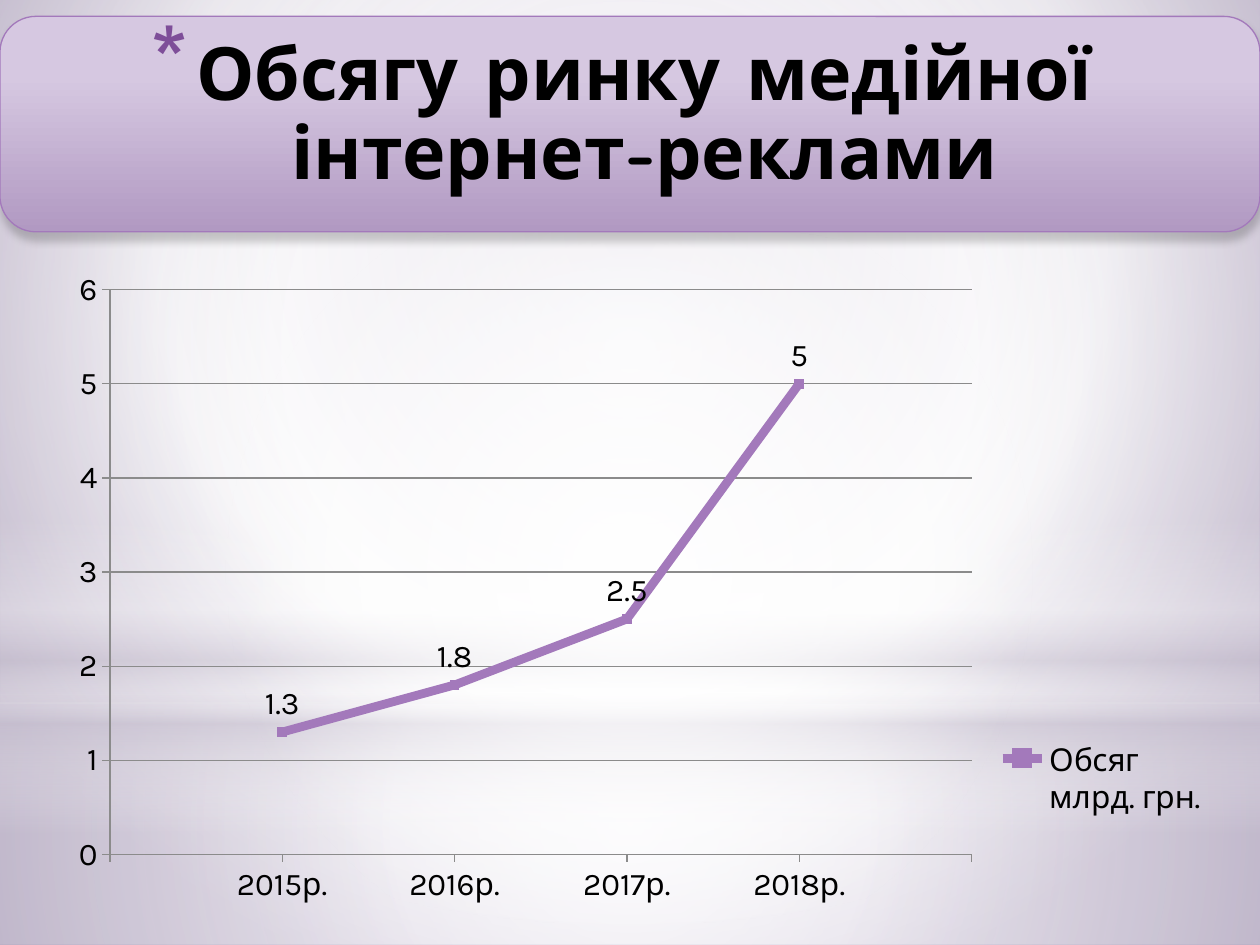
from lxml.etree import SubElement
from pptx import Presentation
from pptx.chart.data import CategoryChartData
from pptx.dml.color import RGBColor
from pptx.enum.chart import XL_CHART_TYPE as CT, XL_LABEL_POSITION as LabelPos
from pptx.enum.chart import XL_LEGEND_POSITION as LegendPos, XL_MARKER_STYLE as Marker
from pptx.enum.chart import XL_TICK_MARK as Tick
from pptx.enum.shapes import MSO_SHAPE as Shape
from pptx.enum.text import MSO_ANCHOR as Anchor, PP_ALIGN as Align
from pptx.oxml import parse_xml
from pptx.oxml.ns import nsdecls, qn
from pptx.util import Inches, Pt

PURPLE = "A379BB"
GRID = "8B8B8B"
CENTER = (50, 50, 50, 50)


def rgb(color):
    return RGBColor.from_string(color)


def set_gradient(fill, owner, stops, focus=None):
    """Stops are (percent, colour[, opacity]); focus makes it circular, else it runs down."""
    fill.solid()
    gs = ""
    for pos, color, *opacity in stops:
        alpha = f'<a:alpha val="{opacity[0] * 1000}"/>' if opacity else ""
        gs += (f'<a:gs pos="{pos * 1000}"><a:srgbClr val="{color}">{alpha}'
               "</a:srgbClr></a:gs>")
    if focus:
        sides = " ".join(f'{k}="{v * 1000}"' for k, v in zip("ltrb", focus))
        shade = f'<a:path path="circle"><a:fillToRect {sides}/></a:path>'
    else:
        shade = '<a:lin ang="5400000" scaled="0"/>'
    solid = owner.find(".//" + qn("a:solidFill"))
    solid.getparent().replace(solid, parse_xml(
        f'<a:gradFill {nsdecls("a")} rotWithShape="1"><a:gsLst>{gs}</a:gsLst>{shade}</a:gradFill>'))


def add_panel(s, kind, box, stops, focus=None):
    sp = s.shapes.add_shape(kind, *map(Inches, box))
    sp.shadow.inherit = False
    set_gradient(sp.fill, sp._element.spPr, stops, focus)
    sp.line.fill.background()
    return sp


def add_backdrop(s):
    set_gradient(s.background.fill, s.element,
                 [(0, "C1B7CD"), (60, "FFFFFF"), (100, "A191B5")], (20, 10, 20, 60))
    add_panel(s, Shape.RECTANGLE, (0, 5.58, 10, 1.92),
              [(0, "FFFFFF", 91), (37, "FFFFFF", 76), (100, "C9C2D1", 79)], CENTER)
    add_panel(s, Shape.RECTANGLE, (0, 0, 10, 5.58),
              [(0, "FFFFFF", 89), (48, "FFFFFF", 62), (100, "C9C2D1", 79)], CENTER)
    add_panel(s, Shape.RECTANGLE, (0, 4.12, 10, 2.5),
              [(0, "FFFFFF", 0), (29, "FFFFFF", 30), (45, "C9C2D1", 40),
               (55, "FFFFFF", 26), (65, "C9C2D1", 60), (100, "FFFFFF", 0)])
    add_panel(s, Shape.OVAL, (0, 1.75, 10, 5.58),
              [(0, "FFFFFF", 100), (56, "FFFFFF", 0)], CENTER)


def set_layout(element, x, y, w, h, inner=False):
    """Place a plot area or legend by fractions of the chart."""
    for old in element.findall(qn("c:layout")):
        element.remove(old)
    layout = parse_xml(f'<c:layout {nsdecls("c")}><c:manualLayout/></c:layout>')
    rules = [("layoutTarget", "inner")] if inner else []
    rules += [("xMode", "edge"), ("yMode", "edge"), ("x", x), ("y", y), ("w", w), ("h", h)]
    for tag, val in rules:
        SubElement(layout[0], qn("c:" + tag)).set("val", str(val))
    if inner:
        element.insert(0, layout)
    else:
        element.find(qn("c:legendPos")).addnext(layout)


def style_axis(axis):
    axis.major_tick_mark = Tick.OUTSIDE
    axis.minor_tick_mark = Tick.NONE
    axis.format.line.color.rgb = rgb(GRID)
    axis.format.line.width = Pt(0.75)


def add_market_chart(s):
    data = CategoryChartData()
    data.categories = ["", "2015р.", "2016р.", "2017р.", "2018р.", ""]
    data.add_series("Обсяг млрд. грн.", [None, 1.3, 1.8, 2.5, 5, None])
    chart = s.shapes.add_chart(CT.LINE_MARKERS, Inches(0.31), Inches(1.7),
                               Inches(9.37), Inches(5.98), data).chart
    chart.has_title = False
    chart.font.size, chart.font.name = Pt(18), "Karla"
    chart.font.color.rgb = rgb("000000")

    value_axis = chart.value_axis
    for axis in (chart.category_axis, value_axis):
        style_axis(axis)
    value_axis.minimum_scale, value_axis.maximum_scale, value_axis.major_unit = 0, 6, 1
    value_axis.has_major_gridlines = True
    value_axis.major_gridlines.format.line.color.rgb = rgb(GRID)
    value_axis.major_gridlines.format.line.width = Pt(0.75)
    # Points sit on the tick marks instead of between them
    value_axis._element.find(qn("c:majorUnit")).addprevious(
        parse_xml(f'<c:crossBetween {nsdecls("c")} val="midCat"/>'))

    plot = chart.plots[0]
    plot.vary_by_categories = False
    series = plot.series[0]
    series.smooth = False
    series.format.line.color.rgb = rgb(PURPLE)
    series.format.line.width = Pt(5)
    series.marker.style, series.marker.size = Marker.SQUARE, 5
    series.marker.format.fill.solid()
    series.marker.format.fill.fore_color.rgb = rgb(PURPLE)
    series.marker.format.line.color.rgb = rgb(PURPLE)
    labels = series.data_labels
    labels.show_value, labels.position = True, LabelPos.ABOVE

    chart.has_legend = True
    legend = chart.legend
    legend.position = LegendPos.RIGHT
    legend.include_in_layout = False
    set_layout(legend._element, 0.81, 0.68, 0.18, 0.14)
    set_layout(chart._chartSpace.chart.plotArea, 0.06, 0.1, 0.73, 0.75, inner=True)


def add_banner(s):
    sp = add_panel(s, Shape.ROUNDED_RECTANGLE, (0, 0.13, 10, 1.71),
                   [(28, "D6C8E1"), (100, "B199C2")])
    sp.line.color.rgb = rgb(PURPLE)
    sp.line.width = Pt(0.75)
    effects = sp._element.spPr.find(qn("a:effectLst"))
    effects.append(parse_xml(
        f'<a:outerShdw {nsdecls("a")} blurRad="{Pt(5)}" dist="{Pt(4)}" dir="5400000" '
        'rotWithShape="0"><a:srgbClr val="000000"><a:alpha val="20000"/></a:srgbClr>'
        "</a:outerShdw>"))


def add_title(s, text):
    tf = s.shapes.add_textbox(Inches(-0.12), Inches(0.21), Inches(10.12), Inches(1.42)).text_frame
    tf.word_wrap = True
    tf.vertical_anchor = Anchor.MIDDLE
    p = tf.paragraphs[0]
    p.text, p.alignment, p.line_spacing = text, Align.CENTER, 0.9
    p.font.size, p.font.name, p.font.bold = Pt(42), "Comic Neue", True
    p.font.color.rgb = rgb("000000")
    pPr = p._p.get_or_add_pPr()
    pPr.set("marL", str(Inches(0.35)))
    pPr.set("indent", str(Inches(-0.35)))
    bullet = ('<a:buClr {0}><a:srgbClr val="7E4E99"/></a:buClr>',
              '<a:buSzPct {0} val="128000"/>', '<a:buChar {0} char="*"/>')
    for xml in bullet:
        pPr.find(qn("a:defRPr")).addprevious(parse_xml(xml.format(nsdecls("a"))))


def main():
    prs = Presentation()
    prs.slide_width, prs.slide_height = Inches(10), Inches(7.5)
    s = prs.slides.add_slide(prs.slide_layouts[6])
    add_backdrop(s)
    add_market_chart(s)
    add_banner(s)
    add_title(s, "Обсягу ринку медійної інтернет-реклами")
    prs.save("out.pptx")


if __name__ == "__main__":
    main()
